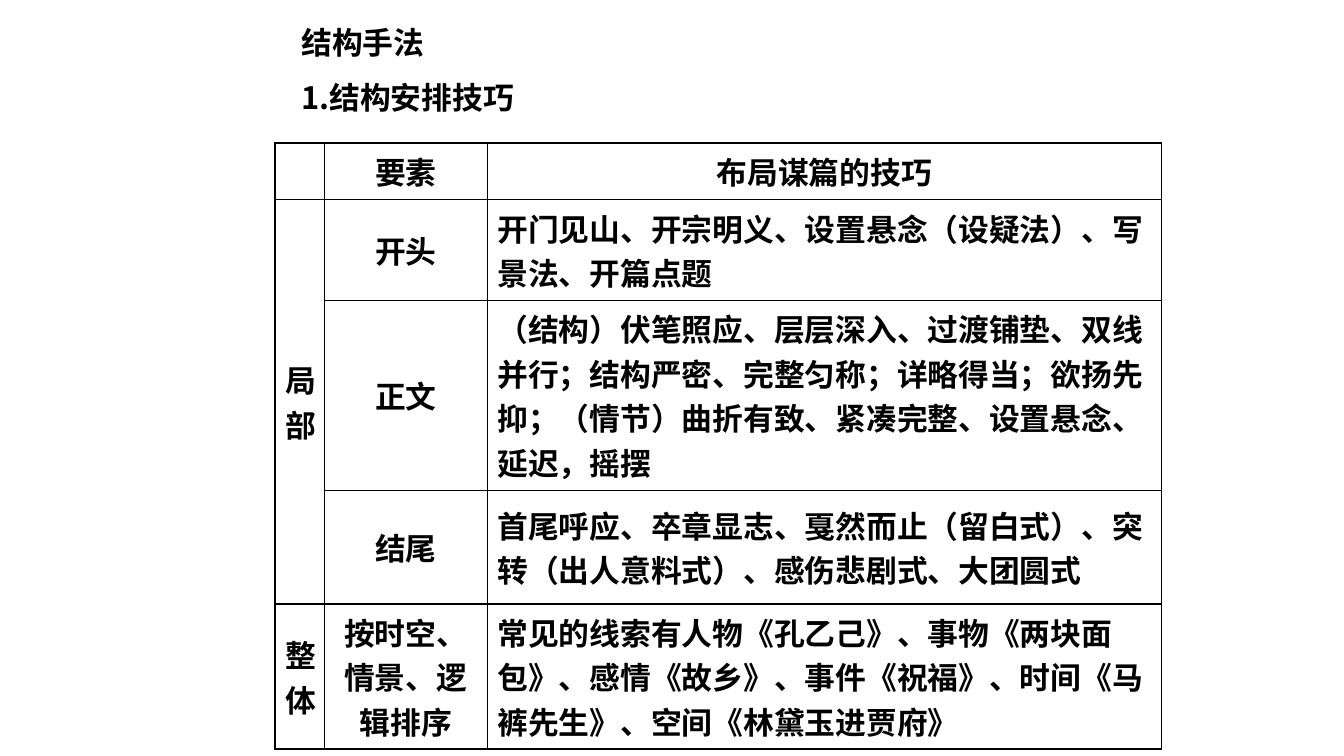
"""Build a slide with a table of structural writing techniques."""
import lxml.etree
import pptx
import pptx.dml.color
import pptx.enum.text
import pptx.oxml.ns
import pptx.util

HEADINGS = ["结构手法", "1.结构安排技巧"]
ROWS = [
    ("", "要素", "布局谋篇的技巧"),
    ("局\n部", "开头", "开门见山、开宗明义、设置悬念（设疑法）、写景法、开篇点题"),
    ("", "正文", "（结构）伏笔照应、层层深入、过渡铺垫、双线并行；结构严密、完整匀称；"
                 "详略得当；欲扬先抑；（情节）曲折有致、紧凑完整、设置悬念、延迟，摇摆"),
    ("", "结尾", "首尾呼应、卒章显志、戛然而止（留白式）、突转（出人意料式）、"
                 "感伤悲剧式、大团圆式"),
    ("整\n体", "按时空、情景、逻辑排序",
     "常见的线索有人物《孔乙己》、事物《两块面包》、感情《故乡》、事件《祝福》、"
     "时间《马裤先生》、空间《林黛玉进贾府》"),
]
COLUMN_WIDTHS = [1.24, 4.11, 16.99]
ROW_HEIGHTS = [1.42, 2.54, 4.78, 2.87, 3.66]
PART_ROWS = (1, 3)
COLORS = {"text": "000000", "border": "000000"}
FONT = "Noto Sans CJK SC"
OUTER_LINE, INNER_LINE = 1.5, 1

Cm = pptx.util.Cm
qn = pptx.oxml.ns.qn
ALIGN = pptx.enum.text.PP_ALIGN
ANCHOR = pptx.enum.text.MSO_ANCHOR


def format_paragraph(paragraph, alignment):
    paragraph.alignment = alignment
    font = paragraph.font
    font.size = pptx.util.Pt(22)
    font.bold = True
    font.color.rgb = pptx.dml.color.RGBColor.from_string(COLORS["text"])
    font.name = FONT
    properties = paragraph._p.pPr.find(qn("a:defRPr"))
    lxml.etree.SubElement(properties, qn("a:ea"), typeface=FONT)


def set_borders(cell, widths):
    properties = cell._tc.get_or_add_tcPr()
    for position, (side, width) in enumerate(widths.items()):
        line = lxml.etree.Element(qn("a:ln" + side), w=str(pptx.util.Pt(width)))
        fill = lxml.etree.SubElement(line, qn("a:solidFill"))
        lxml.etree.SubElement(fill, qn("a:srgbClr"), val=COLORS["border"])
        properties.insert(position, line)


def add_headings(slide):
    title = slide.shapes.title
    title.left, title.top, title.width, title.height = Cm(7.34), Cm(0), Cm(21.72), Cm(3.07)
    frame = title.text_frame
    frame.text = "\n".join(HEADINGS)
    frame.word_wrap = True
    frame.auto_size = pptx.enum.text.MSO_AUTO_SIZE.NONE
    frame.vertical_anchor = ANCHOR.TOP
    for paragraph in frame.paragraphs:
        format_paragraph(paragraph, ALIGN.LEFT)
        paragraph.line_spacing = 1.5


def add_technique_table(slide):
    last_row, last_column = len(ROWS) - 1, len(COLUMN_WIDTHS) - 1
    table = slide.shapes.add_table(
        len(ROWS), len(COLUMN_WIDTHS), Cm(6.93), Cm(3.61),
        Cm(sum(COLUMN_WIDTHS)), Cm(sum(ROW_HEIGHTS))).table
    table.first_row = table.horz_banding = False
    for column, width in zip(table.columns, COLUMN_WIDTHS):
        column.width = Cm(width)
    for row, height in zip(table.rows, ROW_HEIGHTS):
        row.height = Cm(height)
    for row_index, texts in enumerate(ROWS):
        for column_index, text in enumerate(texts):
            cell = table.cell(row_index, column_index)
            cell.text = text
            cell.vertical_anchor = ANCHOR.MIDDLE
            cell.fill.background()
            is_description = row_index > 0 and column_index == last_column
            for paragraph in cell.text_frame.paragraphs:
                format_paragraph(paragraph, ALIGN.LEFT if is_description else ALIGN.CENTER)
            on_edge = {"L": column_index == 0, "R": column_index == last_column,
                       "T": row_index == 0, "B": row_index == last_row}
            set_borders(cell, {side: OUTER_LINE if outer else INNER_LINE
                               for side, outer in on_edge.items()})
    first, last = PART_ROWS
    table.cell(first, 0).merge(table.cell(last, 0))


def main():
    presentation = pptx.Presentation()
    presentation.slide_width, presentation.slide_height = Cm(33.87), Cm(19.05)
    slide = presentation.slides.add_slide(presentation.slide_layouts[5])
    add_headings(slide)
    add_technique_table(slide)
    presentation.save("out.pptx")


if __name__ == "__main__":
    main()
